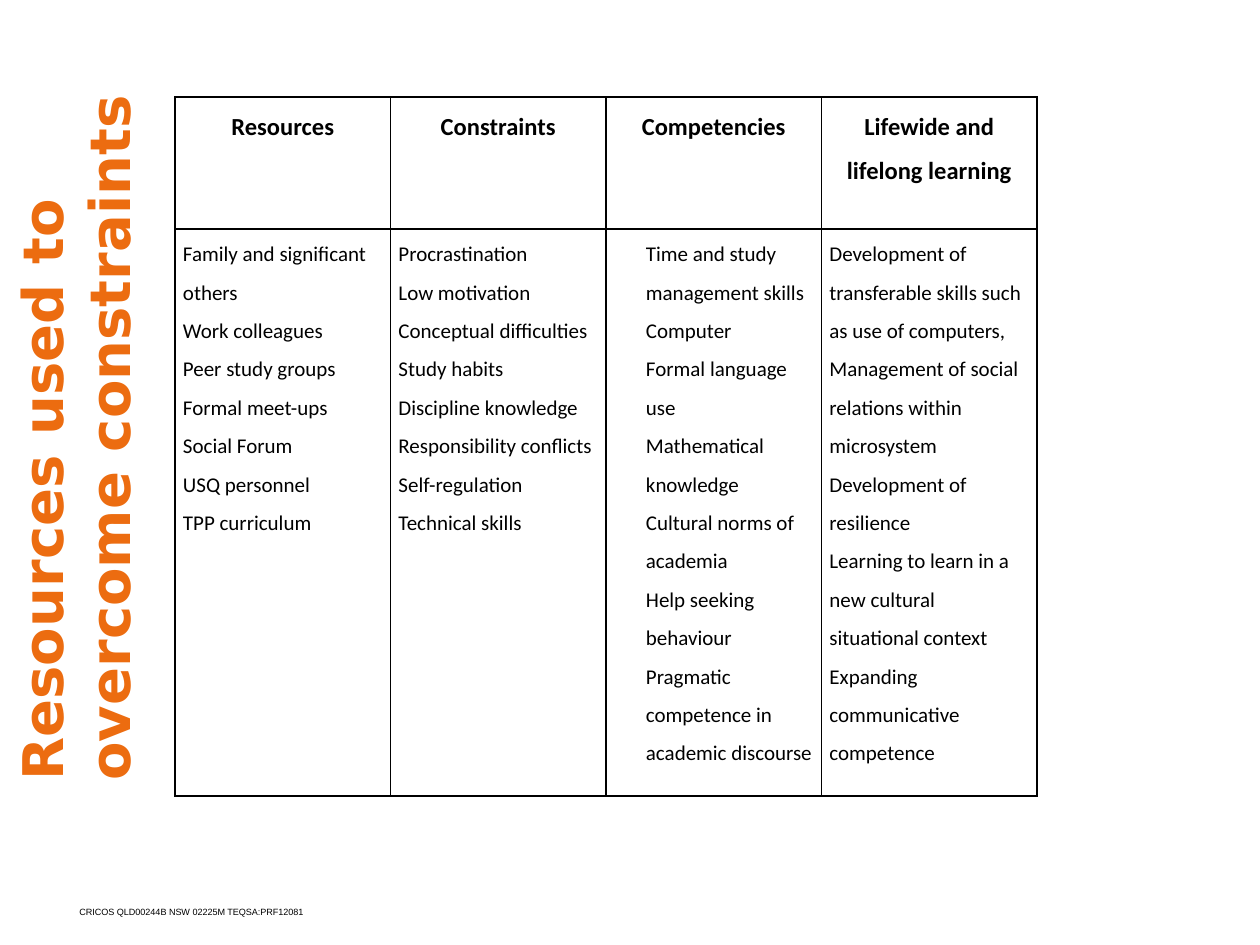
from lxml import etree
from pptx import Presentation
from pptx.dml.color import RGBColor
from pptx.enum.text import MSO_ANCHOR, PP_ALIGN
from pptx.oxml.ns import qn
from pptx.util import Pt

EMU_PER_PX = 914400 / 126
ORANGE = RGBColor(0xEC, 0x6C, 0x10)
BLACK = RGBColor(0, 0, 0)

COLUMNS = {
    "Resources": [
        "Family and significant others", "Work colleagues", "Peer study groups",
        "Formal meet-ups", "Social Forum", "USQ personnel", "TPP curriculum"],
    "Constraints": [
        "Procrastination", "Low motivation", "Conceptual difficulties",
        "Study habits", "Discipline knowledge", "Responsibility conflicts",
        "Self-regulation", "Technical skills"],
    "Competencies": [
        "Time and study management skills", "Computer", "Formal language use",
        "Mathematical knowledge", "Cultural norms of academia",
        "Help seeking behaviour", "Pragmatic competence in academic discourse"],
    "Lifewide and lifelong learning": [
        "Development of transferable skills such as use of computers,",
        "Management of social relations within microsystem",
        "Development of resilience",
        "Learning to learn in a new cultural situational context",
        "Expanding communicative competence"],
}


def px(n):
    return round(n * EMU_PER_PX)


class SlideBuilder:
    title = {"name": "DejaVu Sans", "size": Pt(32), "bold": True, "color": ORANGE}
    footer = {"name": "Arial", "size": Pt(9), "bold": False, "color": BLACK}
    header = {"name": "Calibri", "size": Pt(14), "bold": True, "color": BLACK}
    body = {**header, "size": Pt(12), "bold": False}

    def __init__(self, prs):
        self.s = prs.slides.add_slide(prs.slide_layouts[6])

    def fill_text(self, tf, lines, style, align=PP_ALIGN.LEFT, spacing=1.0, indent=0):
        for i, line in enumerate(lines):
            p = tf.add_paragraph() if i else tf.paragraphs[0]
            p.alignment, p.line_spacing = align, spacing
            if indent:
                p._p.get_or_add_pPr().set("marL", str(px(indent)))
            r = p.add_run()
            r.text = line
            for key, value in style.items():
                if key == "color":
                    r.font.color.rgb = value
                else:
                    setattr(r.font, key, value)

    def text(self, box, line, style, anchor=MSO_ANCHOR.TOP):
        tf = self.s.shapes.add_textbox(*map(px, box)).text_frame
        tf.word_wrap, tf.vertical_anchor = True, anchor
        self.fill_text(tf, [line], style)
        return tf

    def border(self, cell):
        """Draw a 1 pt black line on all four sides of the cell."""
        tc_pr = cell._tc.get_or_add_tcPr()
        for i, side in enumerate(("lnL", "lnR", "lnT", "lnB")):
            ln = etree.Element(qn(f"a:{side}"), w=str(Pt(1)))
            fill = etree.SubElement(ln, qn("a:solidFill"))
            etree.SubElement(fill, qn("a:srgbClr"), val=str(BLACK))
            tc_pr.insert(i, ln)

    def table(self, box, row_heights, columns, indents):
        shape = self.s.shapes.add_table(len(row_heights), len(columns), *map(px, box))
        table = shape.table
        table.first_row = table.horz_banding = False
        for row, height in zip(table.rows, row_heights):
            row.height = px(height)
        for c, (heading, items) in enumerate(columns.items()):
            top, bottom = table.cell(0, c), table.cell(1, c)
            for cell in (top, bottom):
                cell.margin_left = cell.margin_right = px(8)
                cell.margin_top = cell.margin_bottom = 0
                cell.fill.background()
                self.border(cell)
            self.fill_text(top.text_frame, [heading], self.header,
                           PP_ALIGN.CENTER, 1.5)
            self.fill_text(bottom.text_frame, items, self.body, spacing=1.5,
                           indent=indents.get(heading, 0))


def main():
    prs = Presentation()
    prs.slide_width, prs.slide_height = px(1260), px(945)
    slide = SlideBuilder(prs)

    footer = slide.text((67, 898, 344, 25),
                        "CRICOS QLD00244B NSW 02225M TEQSA:PRF12081", slide.footer)
    footer.paragraphs[0].runs[0].font._element.set("baseline", "30000")

    title = slide.text((0, 53, 149, 740), "Resources used to overcome constraints",
                       slide.title, MSO_ANCHOR.MIDDLE)
    title._txBody.bodyPr.set("vert", "vert270")

    slide.table((175, 97, 862, 699), (132, 567), COLUMNS, {"Competencies": 32})
    prs.save("out.pptx")


if __name__ == "__main__":
    main()
